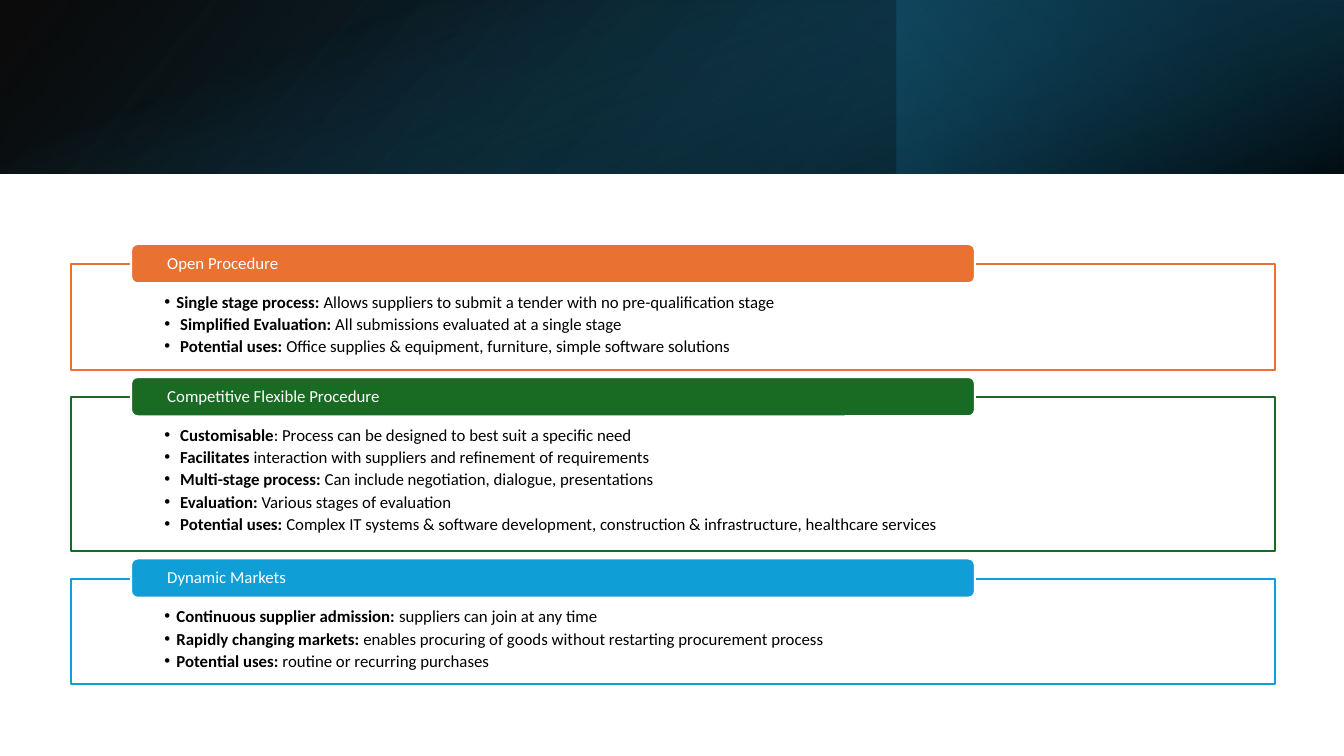
import pptx
import pptx.util
import pptx.dml.color
import pptx.enum.shapes
import pptx.enum.text
import pptx.oxml.ns
import lxml.etree

Inches = pptx.util.Inches
Pt = pptx.util.Pt
SHAPE = pptx.enum.shapes.MSO_SHAPE
qn = pptx.oxml.ns.qn

GROUPS = [
    ("Open Procedure", "E97132", [
        ("Single stage process: ", "Allows suppliers to submit a tender with no pre-qualification stage"),
        (" Simplified Evaluation: ", "All submissions evaluated at a single stage"),
        (" Potential uses: ", "Office supplies & equipment, furniture, simple software solutions"),
    ]),
    ("Competitive Flexible Procedure", "196B24", [
        (" Customisable", ": Process can be designed to best suit a specific need"),
        (" Facilitates", " interaction with suppliers and refinement of requirements"),
        (" Multi-stage process: ", "Can include negotiation, dialogue, presentations"),
        (" Evaluation: ", "Various stages of evaluation"),
        (" Potential uses: ", "Complex IT systems & software development, "
         "construction & infrastructure, healthcare services"),
    ]),
    ("Dynamic Markets", "0F9ED5", [
        ("Continuous supplier admission: ", "suppliers can join at any time"),
        ("Rapidly changing markets: ", "enables procuring of goods without restarting procurement process"),
        ("Potential uses: ", "routine or recurring purchases"),
    ]),
]


def color(code):
    """Turn a hex string into a colour."""
    return pptx.dml.color.RGBColor.from_string(code)


def fade(shape, *levels):
    """Set the opacity, in percent, of the fill colours of a shape."""
    for node, level in zip(shape._element.spPr.iter(qn("a:srgbClr")), levels):
        lxml.etree.SubElement(node, qn("a:alpha")).set("val", str(level * 1000))


def band(slide, place, angle, stops, turn=0, flip=False):
    """Add a borderless rectangle with a two-stop gradient."""
    shape = slide.shapes.add_shape(SHAPE.RECTANGLE, *map(Inches, place))
    shape.shadow.inherit = False
    shape.rotation = turn
    if flip:
        shape._element.spPr.xfrm.set("flipH", "1")
    shape.fill.gradient()
    shape.fill.gradient_angle = 360 - angle
    for stop, (point, code, level) in zip(shape.fill.gradient_stops, stops):
        stop.position = point / 100
        stop.color.rgb = color(code)
    fade(shape, *[level for point, code, level in stops])
    shape.line.fill.background()


def panel(slide, kind, place, fill, line):
    """Add a filled and outlined shape."""
    shape = slide.shapes.add_shape(kind, *map(Inches, place))
    shape.shadow.inherit = False
    shape.fill.solid()
    shape.fill.fore_color.rgb = color(fill)
    shape.line.color.rgb = color(line)
    shape.line.width = Pt(1.5)
    return shape


def frame(shape, inset, anchor):
    """Set the margins and anchor of the text in a shape."""
    text = shape.text_frame
    text.word_wrap = True
    text.vertical_anchor = anchor
    text.margin_left, text.margin_top, text.margin_right, text.margin_bottom = map(Inches, inset)
    return text


def write(para, text, size=12, font="Calibri", code="000000", bold=False):
    """Add a formatted run to a paragraph."""
    para.alignment = pptx.enum.text.PP_ALIGN.LEFT
    run = para.add_run()
    run.text = text
    run.font.size = Pt(size)
    run.font.name = font
    run.font.bold = bold
    run.font.color.rgb = color(code)


def bullet(para):
    """Give a paragraph a bullet with a hanging indent."""
    para.space_after = Pt(1.6)
    props = para._p.get_or_add_pPr()
    props.set("marL", str(Inches(0.12)))
    props.set("indent", str(-Inches(0.12)))
    lxml.etree.SubElement(props, qn("a:buFont")).set("typeface", "Arial")
    lxml.etree.SubElement(props, qn("a:buChar")).set("char", "•")


def group(slide, top, high, title, code, items):
    """Add an outlined list with its title bar."""
    anchor = pptx.enum.text.MSO_ANCHOR
    box = panel(slide, SHAPE.RECTANGLE, (0.7, top, 11.95, high), "FFFFFF", code)
    fade(box, 90)
    text = frame(box, (0.93, 0.27, 0.93, 0.09), anchor.TOP)
    for spot, (lead, rest) in enumerate(items):
        para = text.add_paragraph() if spot else text.paragraphs[0]
        bullet(para)
        write(para, lead, bold=True)
        write(para, rest)
    bar = panel(slide, SHAPE.ROUNDED_RECTANGLE, (1.3, top - 0.2, 8.37, 0.39), code, "FFFFFF")
    para = frame(bar, (0.34, 0, 0.34, 0), anchor.MIDDLE).paragraphs[0]
    para.line_spacing = 0.9
    write(para, title, code="FFFFFF")


def main():
    """Build and save the slide."""
    deck = pptx.Presentation()
    deck.slide_width, deck.slide_height = Inches(13.33), Inches(7.5)
    slide = deck.slides.add_slide(deck.slide_layouts[6])
    band(slide, (0, 0, 13.33, 1.72), 140, [(0, "000000", 96), (100, "104862", 100)], flip=True)
    band(slide, (8.89, 0, 4.44, 1.72), 320, [(19, "0B3041", 68), (100, "156082", 79)], turn=180)
    band(slide, (5.8, -5.8, 1.72, 13.33), 340, [(23, "156082", 0), (99, "000000", 74)], turn=90)
    top = 2.62
    for title, code, items in GROUPS:
        high = 0.33 + 0.24 * len(items)
        group(slide, top, high, title, code, items)
        top += high + 0.27
    deck.save("out.pptx")


if __name__ == "__main__":
    main()
